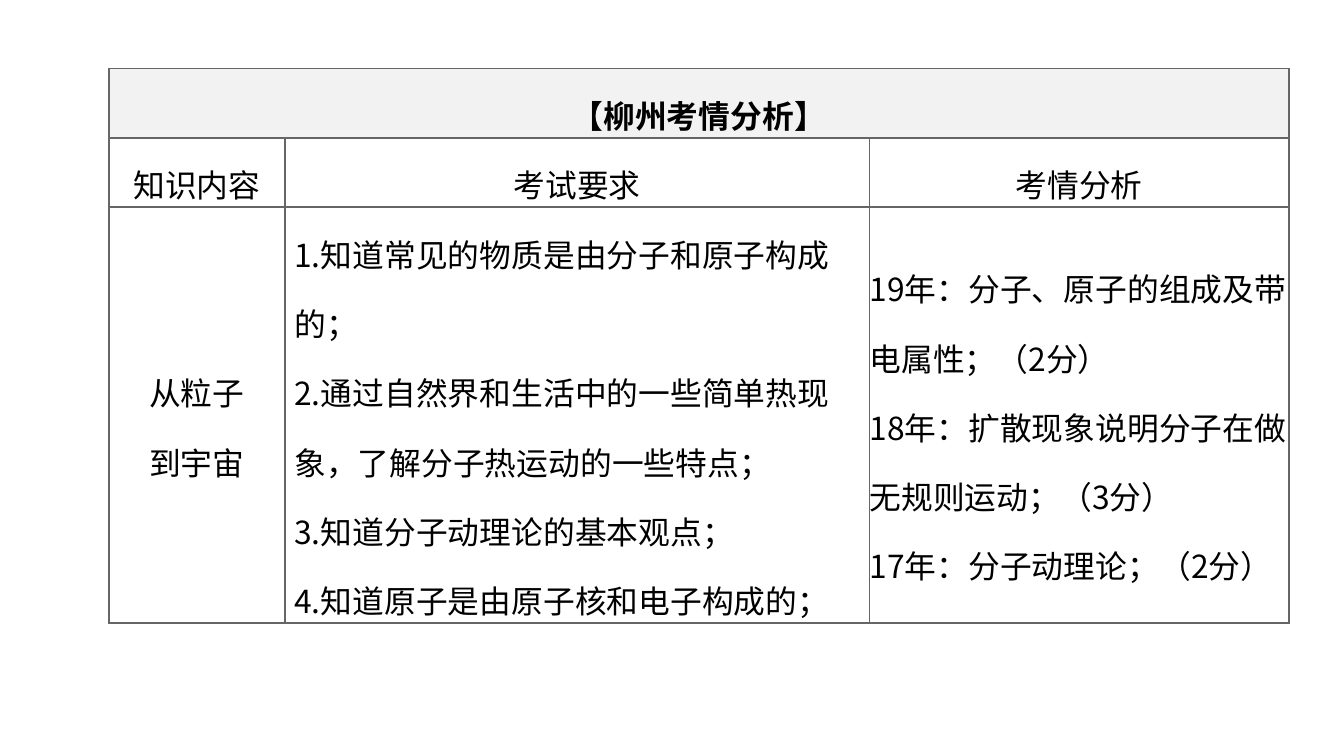
from dataclasses import dataclass

from lxml.etree import SubElement
from pptx import Presentation
from pptx.dml.color import RGBColor
from pptx.enum.text import MSO_ANCHOR, PP_ALIGN
from pptx.oxml import parse_xml
from pptx.oxml.ns import nsdecls, qn
from pptx.util import Inches, Pt


@dataclass(frozen=True)
class Theme:
    font: str = "Noto Sans CJK SC"
    size: float = 17
    line_spacing: float = 1.5
    text: str = "000000"
    title_fill: str = "F2F2F2"
    body_fill: str = "FFFFFF"
    border: str = "666666"
    border_width: float = 1


THEME = Theme()

COLUMN_WIDTHS = (1.31, 4.35, 3.12)
ROW_HEIGHTS = (0.51, 0.51, 3.08)

TITLE = "【柳州考情分析】"
HEADINGS = ("知识内容", "考试要求", "考情分析")
TOPIC = ("从粒子", "到宇宙")
REQUIREMENTS = (
    "1.知道常见的物质是由分子和原子构成的；",
    "2.通过自然界和生活中的一些简单热现象，了解分子热运动的一些特点；",
    "3.知道分子动理论的基本观点；",
    "4.知道原子是由原子核和电子构成的；",
)
EXAM_HISTORY = (
    "19年：分子、原子的组成及带电属性；（2分）　",
    "18年：扩散现象说明分子在做无规则运动；（3分）",
    "17年：分子动理论；（2分）",
)


def write_cell(cell, *lines, align=PP_ALIGN.CENTER, bold=False, side_margin=0):
    """Write one paragraph per line into a table cell."""
    cell.vertical_anchor = MSO_ANCHOR.MIDDLE
    cell.margin_left = cell.margin_right = Inches(side_margin)
    cell.margin_top = cell.margin_bottom = 0
    frame = cell.text_frame
    for index, line in enumerate(lines):
        para = frame.add_paragraph() if index else frame.paragraphs[0]
        para.alignment = align
        para.line_spacing = THEME.line_spacing
        span = para.add_run()
        span.text = line
        span.font.size = Pt(THEME.size)
        span.font.bold = bold
        span.font.color.rgb = RGBColor.from_string(THEME.text)
        span.font.name = THEME.font
        # East Asian characters take their own font entry
        east_asian = SubElement(span._r.get_or_add_rPr(), qn("a:ea"))
        east_asian.set("typeface", THEME.font)


def style_cell(cell, fill):
    """Fill a cell and draw its four borders."""
    cell.fill.solid()
    cell.fill.fore_color.rgb = RGBColor.from_string(fill)
    properties = cell._tc.get_or_add_tcPr()
    for position, side in enumerate(("lnL", "lnR", "lnT", "lnB")):
        border = parse_xml(
            f'<a:{side} {nsdecls("a")} w="{Pt(THEME.border_width)}">'
            f'<a:solidFill><a:srgbClr val="{THEME.border}"/></a:solidFill>'
            f'</a:{side}>'
        )
        properties.insert(position, border)


def add_grid(page):
    """Add the empty table with its sizes, fills and borders."""
    table = page.shapes.add_table(
        len(ROW_HEIGHTS), len(COLUMN_WIDTHS), Inches(0.81), Inches(0.51),
        Inches(sum(COLUMN_WIDTHS)), Inches(sum(ROW_HEIGHTS)),
    ).table
    table.horz_banding = False
    for column, width in zip(table.columns, COLUMN_WIDTHS):
        column.width = Inches(width)
    for index, (row, height) in enumerate(zip(table.rows, ROW_HEIGHTS)):
        row.height = Inches(height)
        for cell in row.cells:
            style_cell(cell, THEME.body_fill if index else THEME.title_fill)
    return table


def main():
    # Widescreen page, 16 to 9
    deck = Presentation()
    deck.slide_width = Inches(10)
    deck.slide_height = Inches(10 * 9 / 16)
    page = deck.slides.add_slide(deck.slide_layouts[6])
    table = add_grid(page)

    # Title row across all columns
    table.cell(0, 0).merge(table.cell(0, len(COLUMN_WIDTHS) - 1))
    write_cell(table.cell(0, 0), TITLE, bold=True)

    # Column headings
    for column, heading in enumerate(HEADINGS):
        write_cell(table.cell(1, column), heading)

    # Topic, requirements and exam history
    write_cell(table.cell(2, 0), *TOPIC)
    write_cell(table.cell(2, 1), *REQUIREMENTS, align=PP_ALIGN.LEFT, side_margin=0.07)
    write_cell(table.cell(2, 2), *EXAM_HISTORY, align=PP_ALIGN.LEFT)

    deck.save("out.pptx")


if __name__ == "__main__":
    main()
